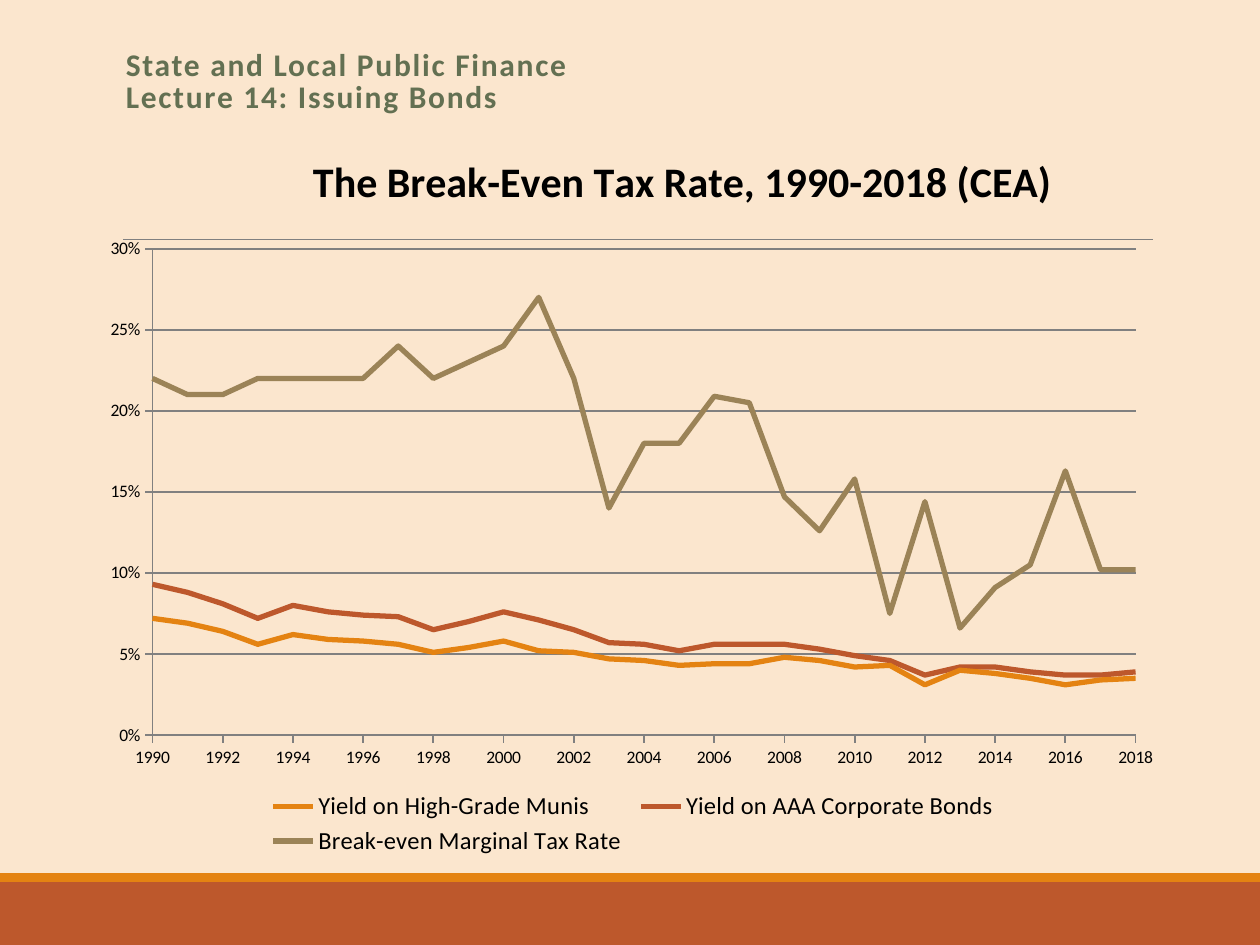
from lxml.etree import SubElement
from pptx import Presentation
from pptx.chart.data import XyChartData
from pptx.dml.color import RGBColor
from pptx.enum.chart import XL_CHART_TYPE, XL_LEGEND_POSITION, XL_TICK_MARK
from pptx.enum.shapes import MSO_CONNECTOR, MSO_SHAPE
from pptx.enum.text import MSO_ANCHOR
from pptx.oxml.ns import qn
from pptx.util import Inches, Pt

WIDTH, HEIGHT = 10, 7.5
FONT = "Calibri"
BACKGROUND, ORANGE, RUST, TAN = "FBE6CE", "E48312", "BD582C", "9B8357"
GREEN, GREY, BLACK = "637052", "808080", "000000"

YEARS = range(1990, 2019)
MUNI_YIELDS = [
    0.072, 0.069, 0.064, 0.056, 0.062, 0.059, 0.058, 0.056, 0.051, 0.054,
    0.058, 0.052, 0.051, 0.047, 0.046, 0.043, 0.044, 0.044, 0.048, 0.046,
    0.042, 0.043, 0.031, 0.04, 0.038, 0.035, 0.031, 0.034, 0.035]
CORPORATE_YIELDS = [
    0.093, 0.088, 0.081, 0.072, 0.08, 0.076, 0.074, 0.073, 0.065, 0.07,
    0.076, 0.071, 0.065, 0.057, 0.056, 0.052, 0.056, 0.056, 0.056, 0.053,
    0.049, 0.046, 0.037, 0.042, 0.042, 0.039, 0.037, 0.037, 0.039]
BREAK_EVEN_RATES = [
    0.22, 0.21, 0.21, 0.22, 0.22, 0.22, 0.22, 0.24, 0.22, 0.23,
    0.24, 0.27, 0.22, 0.14, 0.18, 0.18, 0.209, 0.205, 0.147, 0.126,
    0.158, 0.075, 0.144, 0.066, 0.091, 0.105, 0.163, 0.102, 0.102]
RATES = [
    ("Yield on High-Grade Munis", MUNI_YIELDS, ORANGE),
    ("Yield on AAA Corporate Bonds", CORPORATE_YIELDS, RUST),
    ("Break-even Marginal Tax Rate", BREAK_EVEN_RATES, TAN),
]


def rgb(hex_color):
    return RGBColor.from_string(hex_color)


def apply(target, formats):
    """Set each named attribute of the target."""
    for name, value in formats.items():
        setattr(target, name, value)


def style_font(font, color, **formats):
    apply(font, {"name": FONT, **formats})
    font.color.rgb = rgb(color)


def style_line(line, color, width):
    line.color.rgb = rgb(color)
    line.width = Pt(width)


def add_band(slide, top, height, color):
    """Full-width footer band."""
    band = slide.shapes.add_shape(
        MSO_SHAPE.RECTANGLE, 0, Inches(top), Inches(WIDTH), Inches(height))
    band.shadow.inherit = False
    band.fill.solid()
    band.fill.fore_color.rgb = rgb(color)
    band.line.fill.background()


def add_rule(slide, left, right, y):
    rule = slide.shapes.add_connector(
        MSO_CONNECTOR.STRAIGHT, *map(Inches, (left, y, right, y)))
    style_line(rule.line, GREY, 0.5)
    SubElement(rule.element.spPr, qn("a:effectLst"))


def add_heading(slide, text, box):
    frame = slide.shapes.add_textbox(*map(Inches, box)).text_frame
    apply(frame, {"word_wrap": True, "vertical_anchor": MSO_ANCHOR.MIDDLE})
    frame.text = text
    paragraph = frame.paragraphs[0]
    paragraph.line_spacing = 0.85
    for run in paragraph.runs:
        style_font(run.font, GREEN, size=Pt(18), bold=True)
        run.font._element.set("spc", "100")


def place_part(part, index, inner=False, **shares):
    """Fix a chart part's place, in shares of the chart's size."""
    for old in part.findall(qn("c:layout")):
        part.remove(old)
    layout = SubElement(part, qn("c:layout"))
    part.insert(index, layout)
    manual = SubElement(layout, qn("c:manualLayout"))
    settings = {"layoutTarget": "inner"} if inner else {}
    settings.update(xMode="edge", yMode="edge", **shares)
    for tag, value in settings.items():
        SubElement(manual, qn(f"c:{tag}")).set("val", str(value))


def style_axis(axis, **formats):
    apply(axis, {"major_tick_mark": XL_TICK_MARK.OUTSIDE,
                 "minor_tick_mark": XL_TICK_MARK.NONE, **formats})
    style_line(axis.format.line, GREY, 1)
    style_font(axis.tick_labels.font, BLACK, size=Pt(10))


def clear_chart_background(chart_space):
    properties = SubElement(chart_space, qn("c:spPr"))
    chart_space.find(qn("c:chart")).addnext(properties)
    SubElement(properties, qn("a:noFill"))
    SubElement(SubElement(properties, qn("a:ln")), qn("a:noFill"))


def add_rate_chart(slide, title, box):
    data = XyChartData(number_format="0.0%")
    for name, values, _ in RATES:
        series = data.add_series(name)
        for year, value in zip(YEARS, values):
            series.add_data_point(year, value)
    chart = slide.shapes.add_chart(
        XL_CHART_TYPE.XY_SCATTER_LINES_NO_MARKERS,
        *map(Inches, box), data).chart
    style_font(chart.font, BLACK, size=Pt(10))

    plot = chart.plots[0]
    plot.vary_by_categories = False
    for series, (_, _, color) in zip(plot.series, RATES):
        series.smooth = False
        style_line(series.format.line, color, 3)

    style_axis(chart.category_axis, minimum_scale=YEARS[0],
               maximum_scale=YEARS[-1], major_unit=2,
               has_major_gridlines=False)
    style_axis(chart.value_axis, minimum_scale=0, maximum_scale=0.3,
               major_unit=0.05, has_major_gridlines=True)
    style_line(chart.value_axis.major_gridlines.format.line, GREY, 1)
    for axis, number_format in ((chart.category_axis, "0"),
                                (chart.value_axis, "0%")):
        apply(axis.tick_labels, {"number_format": number_format,
                                 "number_format_is_linked": False})

    chart.has_title = True
    heading = chart.chart_title.text_frame
    heading.text = title
    style_font(heading.paragraphs[0].runs[0].font, BLACK,
               size=Pt(24), bold=True)

    chart.has_legend = True
    apply(chart.legend, {"position": XL_LEGEND_POSITION.BOTTOM,
                         "include_in_layout": False})
    style_font(chart.legend.font, BLACK, size=Pt(14))

    chart_space = chart.element
    clear_chart_background(chart_space)
    body = chart_space.find(qn("c:chart"))
    place_part(body.find(qn("c:plotArea")), 0, inner=True,
               x=0.06, y=0.17, w=0.9, h=0.66)
    place_part(body.find(qn("c:title")), 1, x=0.2, y=0.03)
    place_part(body.find(qn("c:legend")), 1, x=0.16, y=0.9, w=0.68, h=0.1)


def main():
    presentation = Presentation()
    apply(presentation, {"slide_width": Inches(WIDTH),
                         "slide_height": Inches(HEIGHT)})
    slide = presentation.slides.add_slide(presentation.slide_layouts[6])
    slide.background.fill.solid()
    slide.background.fill.fore_color.rgb = rgb(BACKGROUND)

    add_band(slide, 7, 0.5, RUST)
    add_band(slide, 6.93, 0.07, ORANGE)
    add_rule(slide, 0.98, 9.15, 1.9)
    add_heading(slide,
                "State and Local Public Finance\vLecture 14: Issuing Bonds",
                (0.9, 0.33, 8.25, 0.65))
    add_rate_chart(slide, "The Break-Even Tax Rate, 1990-2018 (CEA)",
                   (0.69, 0.98, 8.67, 5.85))
    presentation.save("out.pptx")


if __name__ == "__main__":
    main()
